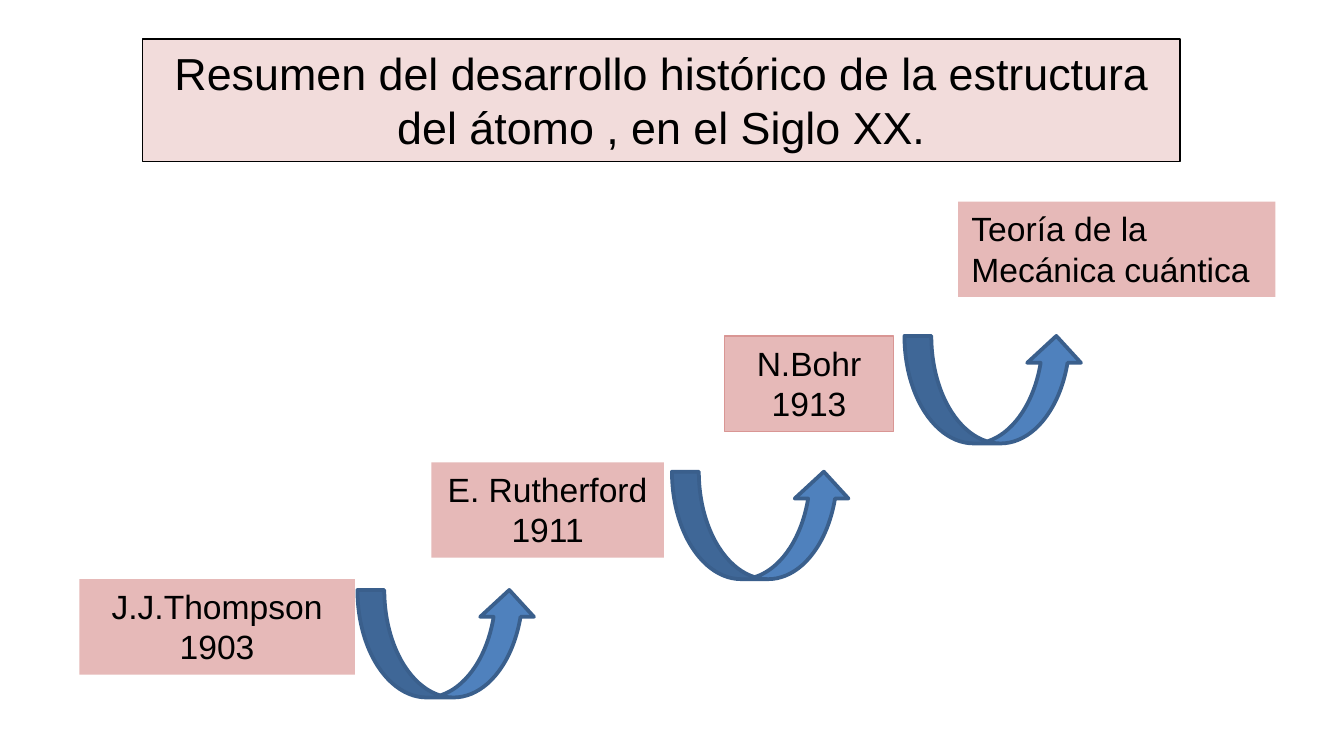
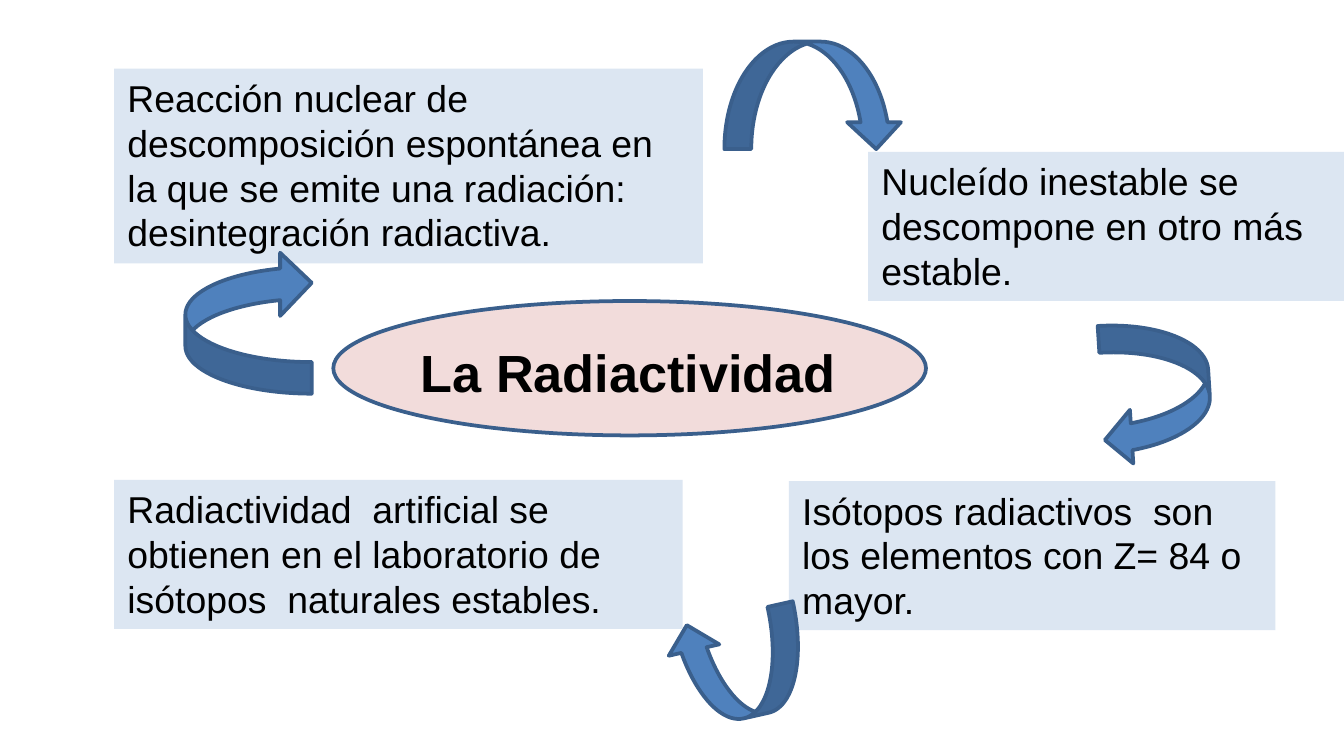
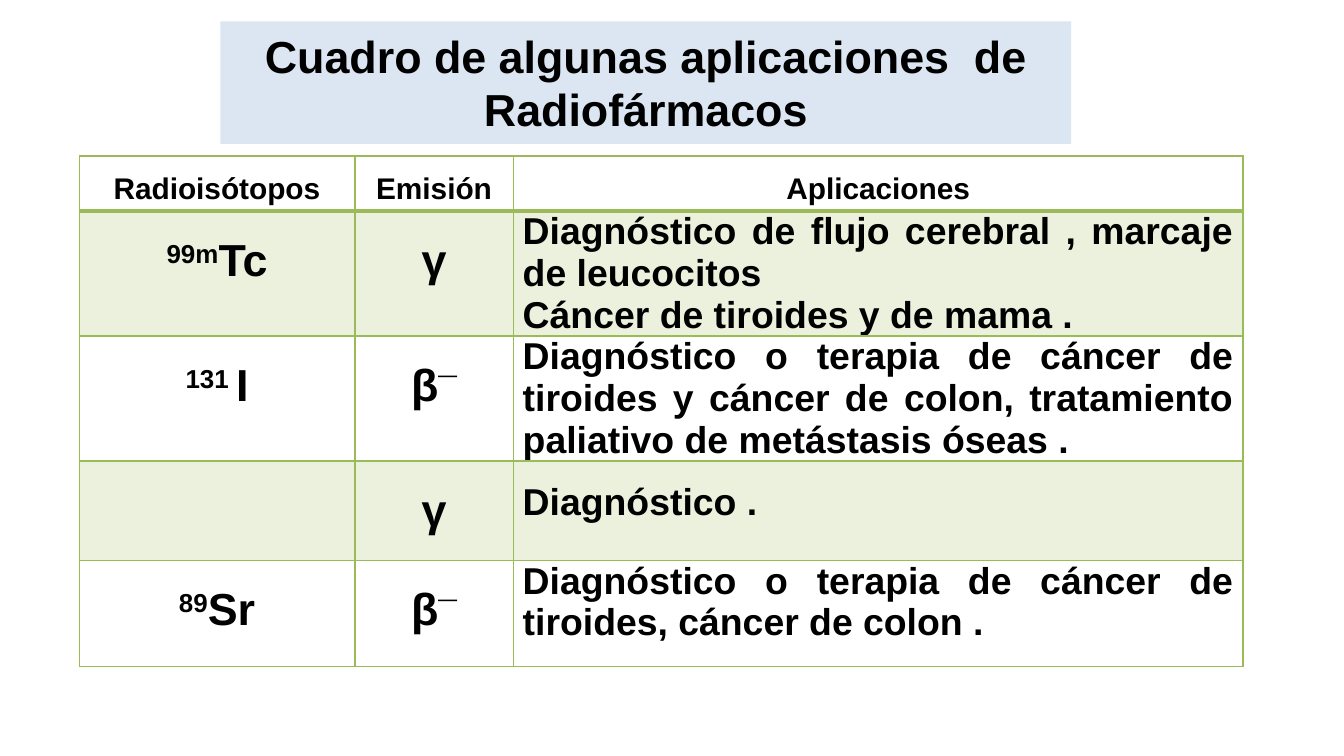
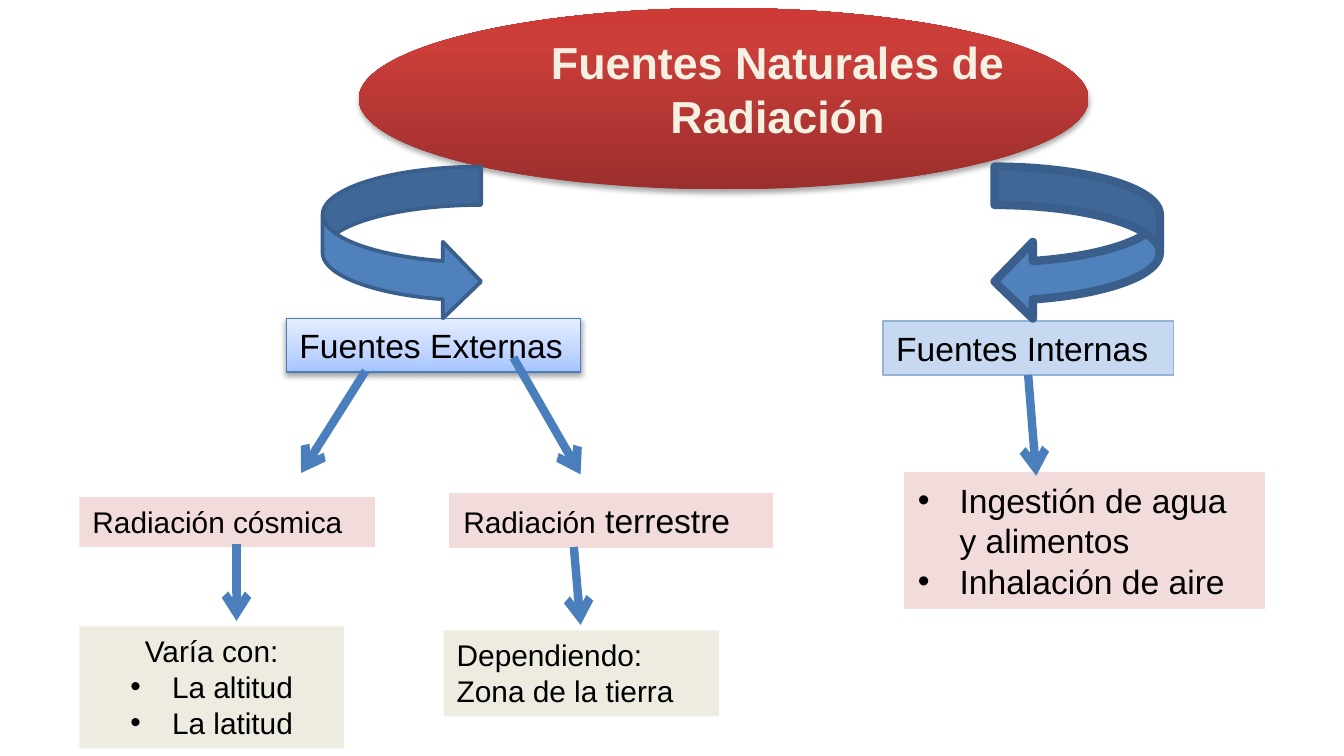
from lxml.etree import SubElement
from pptx import Presentation
from pptx.dml.color import RGBColor
from pptx.enum.shapes import MSO_CONNECTOR, MSO_SHAPE
from pptx.enum.text import MSO_ANCHOR, MSO_AUTO_SIZE, PP_ALIGN
from pptx.oxml import parse_xml
from pptx.oxml.ns import nsdecls, qn
from pptx.util import Inches, Pt

COLORS = {
    "ink": "000000", "rose": "F2DCDB", "pink": "E6B9B8", "pink_edge": "D99694",
    "ice": "DCE6F2", "sky": "C6D9F1", "sky_edge": "95B3D7", "sand": "EEECE1",
    "cream": "F4F1E3", "arrow": "4F81BD", "arrow_edge": "3A5F8C",
    "link": "4B7EBC", "green": "9BBB59",
}
RGB = {name: RGBColor.from_string(value) for name, value in COLORS.items()}
BASE_FONT = {"name": "Arial", "size": Pt(18), "bold": False}
FRAME_FORMAT = {
    "word_wrap": True,
    "auto_size": MSO_AUTO_SIZE.SHAPE_TO_FIT_TEXT,
    "vertical_anchor": MSO_ANCHOR.TOP,
}


def write(frame, paragraphs, size, align=PP_ALIGN.LEFT, bold=False, color="ink", spacing=1.0):
    for index, content in enumerate(paragraphs):
        paragraph = frame.paragraphs[0] if index == 0 else frame.add_paragraph()
        paragraph.alignment = align
        paragraph.line_spacing = spacing
        paragraph.space_before = Pt(0)
        properties = paragraph._p.get_or_add_pPr()
        runs = [(content, size, 0)] if isinstance(content, str) else content
        bulleted = runs[0][0].startswith("•")
        indent = Inches(0.31) if bulleted else 0
        properties.set("marL", str(indent))
        properties.set("indent", str(-indent))
        if bulleted:
            SubElement(properties, qn("a:buFont")).set("typeface", "Arial")
            SubElement(properties, qn("a:buChar")).set("char", "•")
        else:
            SubElement(properties, qn("a:buNone"))
        for text, points, baseline in runs:
            run = paragraph.add_run()
            run.text = text.lstrip("•")
            for key, value in {**BASE_FONT, "size": Pt(points), "bold": bold}.items():
                setattr(run.font, key, value)
            run.font.color.rgb = RGB[color]
            if baseline:
                run.font._element.set("baseline", str(baseline * 1000))


def place(slide, box, fill=None, edge=None, weight=0.75, kind=MSO_SHAPE.RECTANGLE, holder=None):
    bounds = [Inches(value) for value in box]
    if holder is None:
        item = slide.shapes.add_shape(kind, *bounds)
        item.shadow.inherit = False
    else:
        item = slide.placeholders[holder]
        slide.shapes.element.append(item.element)
        for key, value in zip(("left", "top", "width", "height"), bounds):
            setattr(item, key, value)
    if fill:
        item.fill.solid()
        item.fill.fore_color.rgb = RGB[fill]
    if edge:
        item.line.color.rgb = RGB[edge]
        item.line.width = Pt(weight)
    else:
        item.line.fill.background()
    for key, value in FRAME_FORMAT.items():
        setattr(item.text_frame, key, value)
    if holder:
        item.text_frame.auto_size = MSO_AUTO_SIZE.NONE
    return item


deck = Presentation()
deck.slide_width = Inches(10)
deck.slide_height = deck.slide_width * 9 // 16
title_only, two_lists = deck.slide_layouts[5], deck.slide_layouts[3]

history = deck.slides.add_slide(title_only)
heading = place(history, (1.06, 0.29, 7.72, 0.91), "rose", "ink", holder=0)
write(heading.text_frame, ["Resumen del desarrollo histórico de la estructura del átomo , en el Siglo XX."],
      24, PP_ALIGN.CENTER)
for left, top, width, edge, align, lines in [
    (0.59, 4.31, 2.05, None, PP_ALIGN.CENTER, ["J.J.Thompson", "1903"]),
    (3.21, 3.44, 1.73, None, PP_ALIGN.CENTER, ["E. Rutherford", "1911"]),
    (5.39, 2.5, 1.26, "pink_edge", PP_ALIGN.CENTER, ["N.Bohr", "1913"]),
    (7.13, 1.5, 2.36, None, PP_ALIGN.LEFT, ["Teoría de la Mecánica cuántica"]),
]:
    milestone = place(history, (left, top, width, 0.71), "pink", edge)
    write(milestone.text_frame, lines, 18, align)
for left, top in [(2.66, 4.39), (5, 3.51), (6.73, 2.5)]:
    place(history, (left, top, 1.33, 0.8), "arrow", "arrow_edge", 2, MSO_SHAPE.CURVED_UP_ARROW)

radioactivity = deck.slides.add_slide(title_only)
place(radioactivity, (2.48, 2.24, 4.41, 1), "rose", "arrow_edge", 2, MSO_SHAPE.OVAL)
heading = place(radioactivity, (3.03, 2.48, 3.39, 0.57), holder=0)
write(heading.text_frame, ["La Radiactividad"], 28, bold=True)
for box, lines in [
    ((0.85, 0.51, 4.38, 1.45), ["Reacción nuclear de descomposición espontánea en la que se emite una radiación: "
                                "desintegración radiactiva."]),
    ((6.46, 1.13, 3.54, 1.11), ["Nucleído inestable se descompone en otro más estable."]),
    ((5.87, 3.58, 3.62, 1.11), ["Isótopos radiactivos  son los elementos con Z= 84 o mayor."]),
    ((0.85, 3.57, 4.23, 1.11), ["Radiactividad  artificial se obtienen en el laboratorio de",
                                "isótopos  naturales estables."]),
]:
    write(place(radioactivity, box, "ice").text_frame, lines, 20)
for box, kind, rotation, flipped in [
    ((1.38, 1.87, 0.94, 1.06), MSO_SHAPE.CURVED_LEFT_ARROW, 0, True),
    ((5.39, 0.31, 1.33, 0.8), MSO_SHAPE.CURVED_DOWN_ARROW, 0, False),
    ((8.2, 2.4, 0.8, 1.05), MSO_SHAPE.CURVED_LEFT_ARROW, 356.4, False),
    ((5.11, 4.46, 0.77, 1), MSO_SHAPE.CURVED_LEFT_ARROW, 77.3, False),
]:
    cycle_arrow = place(radioactivity, box, "arrow", "arrow_edge", 2, kind)
    cycle_arrow.rotation = rotation
    if flipped:
        for axis in ("flipH", "flipV"):
            cycle_arrow.element.spPr.find(qn("a:xfrm")).set(axis, "1")

drugs = deck.slides.add_slide(title_only)
rows = [
    (["Radioisótopos"], ["Emisión"], ["Aplicaciones"]),
    ([[("99m", 24, 30), ("Tc", 24, 0)]], ["γ"],
     ["Diagnóstico de flujo cerebral , marcaje de leucocitos", "Cáncer de tiroides y de mama ."]),
    ([[("131 ", 24, 30), ("I", 24, 0)]], [[("β", 24, 0), ("¯", 18, 0)]],
     ["Diagnóstico o terapia de cáncer de tiroides y cáncer de colon, tratamiento paliativo de metástasis óseas ."]),
    ([], ["γ"], ["Diagnóstico ."]),
    ([[("89", 24, 30), ("Sr", 24, 0)]], [[("β", 24, 0), ("¯", 18, 0)]],
     ["Diagnóstico o terapia de cáncer de tiroides, cáncer de colon ."]),
]
table_frame = drugs.shapes.add_table(5, 3, Inches(0.59), Inches(1.16), Inches(8.66), Inches(3.94))
table = table_frame.table
table.first_row = table.horz_banding = False
for column, width in zip(table.columns, (2.05, 1.18, 5.43)):
    column.width = Inches(width)
for row, height in zip(table.rows, (0.41, 0.41, 0.41, 0.74, 0.79)):
    row.height = Inches(height)
table_frame.height = Inches(3.94)
CELL_MARGINS = {"margin_left": Inches(0.07), "margin_right": Inches(0.07), "margin_top": 0, "margin_bottom": 0}
for row_index, row in enumerate(rows):
    for column_index, paragraphs in enumerate(row):
        cell = table.cell(row_index, column_index)
        for key, value in CELL_MARGINS.items():
            setattr(cell, key, value)
        use_text = row_index > 0 and column_index == 2
        write(cell.text_frame, paragraphs,
              16 if row_index == 0 else 20 if use_text else 24,
              PP_ALIGN.JUSTIFY if use_text else PP_ALIGN.CENTER, True,
              spacing=1.0 if use_text and row_index != 3 else 1.5)
        cell_format = cell._tc.get_or_add_tcPr()
        for side in "LRTB":
            thick = row_index == 0 and side == "B"
            cell_format.append(parse_xml(
                f'<a:ln{side} {nsdecls("a")} w="{Pt(2 if thick else 1)}"><a:solidFill>'
                f'<a:srgbClr val="{COLORS["green"]}"/></a:solidFill></a:ln{side}>'))
        if row_index % 2:
            cell.fill.solid()
            cell.fill.fore_color.rgb = RGB["green"]
            SubElement(cell_format.find(qn("a:solidFill"))[0], qn("a:alpha")).set("val", "20000")
        else:
            cell.fill.background()
heading = place(drugs, (1.64, 0.16, 6.33, 0.91), "ice", holder=0)
write(heading.text_frame, ["Cuadro de algunas aplicaciones  de Radiofármacos"], 24, PP_ALIGN.CENTER, True)

sources = deck.slides.add_slide(two_lists)
banner = place(sources, (2.67, 0.06, 5.43, 1.35), kind=MSO_SHAPE.OVAL)
external = place(sources, (2.13, 2.37, 2.19, 0.4), edge="link")
write(external.text_frame, ["Fuentes Externas"], 18)
for glossy, stops, opacity, distance in [
    (banner, [(0, "9C2F2D"), (80, "CB3E3A"), (100, "CE3B37")], 35, 1.8),
    (external, [(0, "A4C4FF"), (35, "BFD4FF"), (100, "E6EEFF")], 38, 1.6),
]:
    glossy.fill.gradient()
    glossy.fill.gradient_angle = 90
    stop_list = glossy.element.spPr.find(".//" + qn("a:gsLst"))
    stop_list.clear()
    for position, value in stops:
        stop = SubElement(stop_list, qn("a:gs"), pos=str(position * 1000))
        SubElement(stop, qn("a:srgbClr"), val=value)
    glossy.element.spPr.find(qn("a:effectLst")).append(parse_xml(
        f'<a:outerShdw {nsdecls("a")} blurRad="{Pt(3.1)}" dist="{Pt(distance)}" dir="5400000" rotWithShape="0">'
        f'<a:srgbClr val="{COLORS["ink"]}"><a:alpha val="{opacity * 1000}"/></a:srgbClr></a:outerShdw>'))
internal = place(sources, (6.57, 2.39, 2.16, 0.4), "sky", "sky_edge")
write(internal.text_frame, ["Fuentes Internas"], 18)
heading = place(sources, (3.86, 0.21, 3.85, 0.91), holder=0)
write(heading.text_frame, ["Fuentes Naturales de Radiación"], 24, PP_ALIGN.CENTER, True, "cream")
heading.text_frame.paragraphs[0].runs[0].font._element.insert(0, parse_xml(
    f'<a:ln {nsdecls("a")} w="{Pt(1)}"><a:solidFill><a:srgbClr val="{COLORS["sand"]}"/></a:solidFill></a:ln>'))

for box, fill, edge, size, align, holder, lines in [
    ((0.59, 3.7, 2.2, 0.37), "rose", None, 16, PP_ALIGN.LEFT, None, ["Radiación cósmica"]),
    ((3.35, 3.67, 2.4, 0.4), "rose", "rose", 16, PP_ALIGN.LEFT, None,
     [[("Radiación", 16, 0), (" terrestre", 18, 0)]]),
    ((0.59, 4.66, 1.97, 0.91), "sand", None, 16, PP_ALIGN.CENTER, 1,
     ["Varía con:", "•La altitud", "•La latitud"]),
    ((3.3, 4.69, 2.05, 0.64), "sand", None, 16, PP_ALIGN.LEFT, None, ["Dependiendo:", "Zona de la tierra"]),
    ((6.73, 3.52, 2.68, 1.01), "rose", "rose", 18, PP_ALIGN.LEFT, 2,
     ["•Ingestión de agua y alimentos", "•Inhalación de aire"]),
]:
    write(place(sources, box, fill, edge, holder=holder).text_frame, lines, size, align)

for ends, origin in [
    ((1.76, 4.05, 1.76, 4.62), None),
    ((4.27, 4.07, 4.32, 4.65), None),
    ((2.72, 2.76, 2.24, 3.52), None),
    ((3.82, 2.66, 4.32, 3.53), None),
    ((7.65, 2.8, 7.71, 3.54), internal),
]:
    link = sources.shapes.add_connector(MSO_CONNECTOR.STRAIGHT, *[Inches(value) for value in ends])
    if origin is not None:
        link.begin_connect(origin, 2)
    link.line.color.rgb = RGB["link"]
    link.line.width = Pt(4.5)
    SubElement(link.line._get_or_add_ln(), qn("a:tailEnd"), type="arrow")
    SubElement(link.element.spPr, qn("a:effectLst"))

outward = place(sources, (2.4, 1.24, 1.18, 1.14), "arrow", "arrow_edge", 2, MSO_SHAPE.CURVED_RIGHT_ARROW)
outward.adjustments[1] = 0.584
place(sources, (7.4, 1.24, 1.23, 1.14), "arrow", "arrow_edge", 4.5, MSO_SHAPE.CURVED_LEFT_ARROW)

deck.save("out.pptx")
